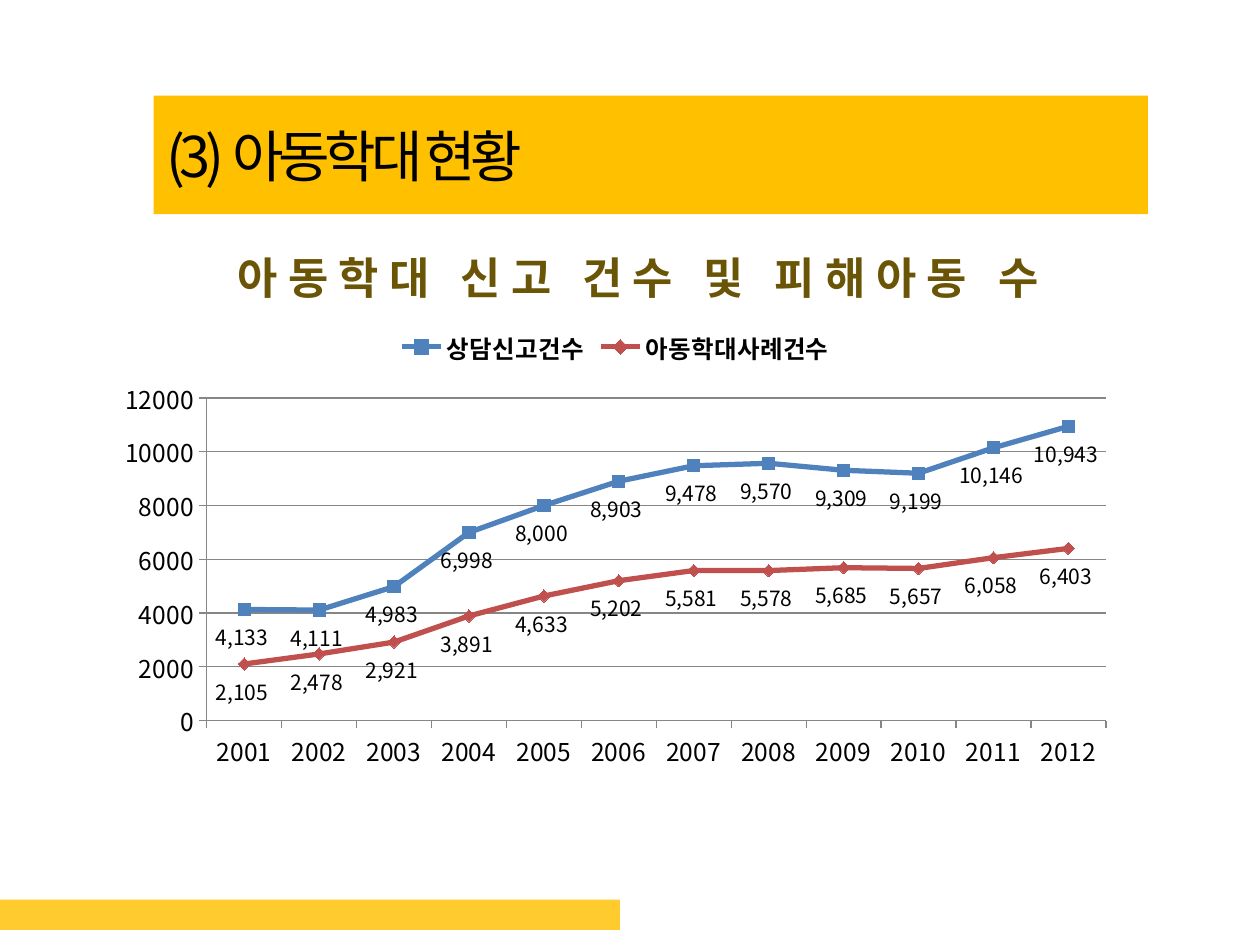
"""Build the slide on child abuse reports and confirmed cases, 2001 to 2012."""
from lxml import etree
from pptx import Presentation, util as u
from pptx.chart.data import CategoryChartData
from pptx.dml.color import RGBColor
from pptx.enum import chart as ch, shapes, text
from pptx.oxml.ns import qn

THEME = {
    "font": "Noto Sans CJK KR", "ink": "000000", "gold": "FFC000",
    "brown": "6A5506", "grid": "868686",
    "title": 32, "head": 25, "axis": 14, "label": 12,
}
TITLE = "(3) 아동학대 현황"
HEAD = "아동학대 신고 건수 및 피해아동 수"
FIRST = 2001
SERIES = [
    ("상담신고건수", "4F81BD", ch.XL_MARKER_STYLE.SQUARE,
     [4133, 4111, 4983, 6998, 8000, 8903, 9478, 9570, 9309, 9199, 10146, 10943]),
    ("아동학대사례건수", "C0504D", ch.XL_MARKER_STYLE.DIAMOND,
     [2105, 2478, 2921, 3891, 4633, 5202, 5581, 5578, 5685, 5657, 6058, 6403]),
]
FORMAT = r"#,##0_);[Red]\(#,##0\)"
BOXES = {
    "band": (0, 7.14, 4.92, 0.24),
    "title": (1.22, 0.76, 7.89, 0.94),
    "head": (1.05, 1.94, 8.03, 0.52),
    "chart": (0.83, 2.5, 8.11, 3.66),
}
PLOT = {"x": 0.1, "y": 0.18, "w": 0.88, "h": 0.7}


def color(name):
    return RGBColor.from_string(THEME.get(name, name))


def box(name):
    return [u.Inches(n) for n in BOXES[name]]


def style(font, size, ink="ink", bold=False):
    font.name, font.size, font.bold = THEME["font"], u.Pt(THEME[size]), bold
    font.color.rgb = color(ink)


def east(props):
    face = etree.Element(qn("a:ea"), typeface=THEME["font"])
    props.find(qn("a:latin")).addnext(face)


def write(shape, words, size, ink="ink", bold=False, align="LEFT", gap=0):
    frame = shape.text_frame
    frame.word_wrap = True
    frame.auto_size = text.MSO_AUTO_SIZE.NONE
    frame.vertical_anchor = text.MSO_ANCHOR.MIDDLE
    para = frame.paragraphs[0]
    para.alignment = getattr(text.PP_ALIGN, align)
    run = para.add_run()
    run.text = words
    style(run.font, size, ink, bold)
    props = run.font._element if hasattr(run.font, "_element") else run._r.get_or_add_rPr()
    props.set("spc", str(gap * 100))
    east(props)


def fill(shape, name):
    shape.fill.solid()
    shape.fill.fore_color.rgb = color(name)


def add_band(slide):
    band = slide.shapes.add_shape(shapes.MSO_SHAPE.RECTANGLE, *box("band"))
    band.shadow.inherit = False
    band.line.fill.background()
    fill(band, "gold")
    tint = band._element.spPr.find(qn("a:solidFill"))[0]
    etree.SubElement(tint, qn("a:alpha"), val="82000")


def place_plot(chart):
    area = chart._chartSpace.chart.plotArea
    for old in area.findall(qn("c:layout")):
        area.remove(old)
    layout = etree.Element(qn("c:layout"))
    area.insert(0, layout)
    manual = etree.SubElement(layout, qn("c:manualLayout"))
    rules = {"layoutTarget": "inner", "xMode": "edge", "yMode": "edge", **PLOT}
    for key, val in rules.items():
        etree.SubElement(manual, qn(f"c:{key}"), val=str(val))


def add_chart(slide):
    data = CategoryChartData()
    data.categories = [str(FIRST + i) for i in range(len(SERIES[0][3]))]
    for name, _, _, vals in SERIES:
        data.add_series(name, vals)
    kind = ch.XL_CHART_TYPE.LINE_MARKERS
    chart = slide.shapes.add_chart(kind, *box("chart"), data).chart
    chart.has_title = False
    style(chart.font, "axis")
    chart.has_legend = True
    chart.legend.position = ch.XL_LEGEND_POSITION.TOP
    chart.legend.include_in_layout = False
    style(chart.legend.font, "axis", bold=True)
    value = chart.value_axis
    value.minimum_scale, value.maximum_scale, value.major_unit = 0, 12000, 2000
    value.has_major_gridlines = True
    for axis in (value, chart.category_axis):
        axis.major_tick_mark = ch.XL_TICK_MARK.OUTSIDE
        axis.format.line.color.rgb = color("grid")
    value.major_gridlines.format.line.color.rgb = color("grid")
    chart.plots[0].vary_by_categories = False
    for line, (_, tone, mark, _) in zip(chart.plots[0].series, SERIES):
        line.smooth = False
        line.format.line.color.rgb = color(tone)
        line.format.line.width = u.Pt(3)
        line.marker.style, line.marker.size = mark, 7
        fill(line.marker.format, tone)
        line.marker.format.line.color.rgb = color(tone)
        labels = line.data_labels
        labels.show_value = True
        labels.position = ch.XL_LABEL_POSITION.BELOW
        labels.number_format, labels.number_format_is_linked = FORMAT, False
        style(labels.font, "label")
    for props in chart._chartSpace.iter(qn("a:defRPr")):
        east(props)
    place_plot(chart)


def main():
    deck = Presentation()
    deck.slide_width, deck.slide_height = u.Inches(10), u.Inches(7.5)
    slide = deck.slides.add_slide(deck.slide_layouts[5])
    add_band(slide)
    title = slide.shapes.title
    title.left, title.top, title.width, title.height = box("title")
    fill(title, "gold")
    write(title, TITLE, "title", gap=-3)
    head = slide.shapes.add_textbox(*box("head"))
    write(head, HEAD, "head", ink="brown", bold=True, align="CENTER", gap=6)
    add_chart(slide)
    deck.save("out.pptx")


if __name__ == "__main__":
    main()
